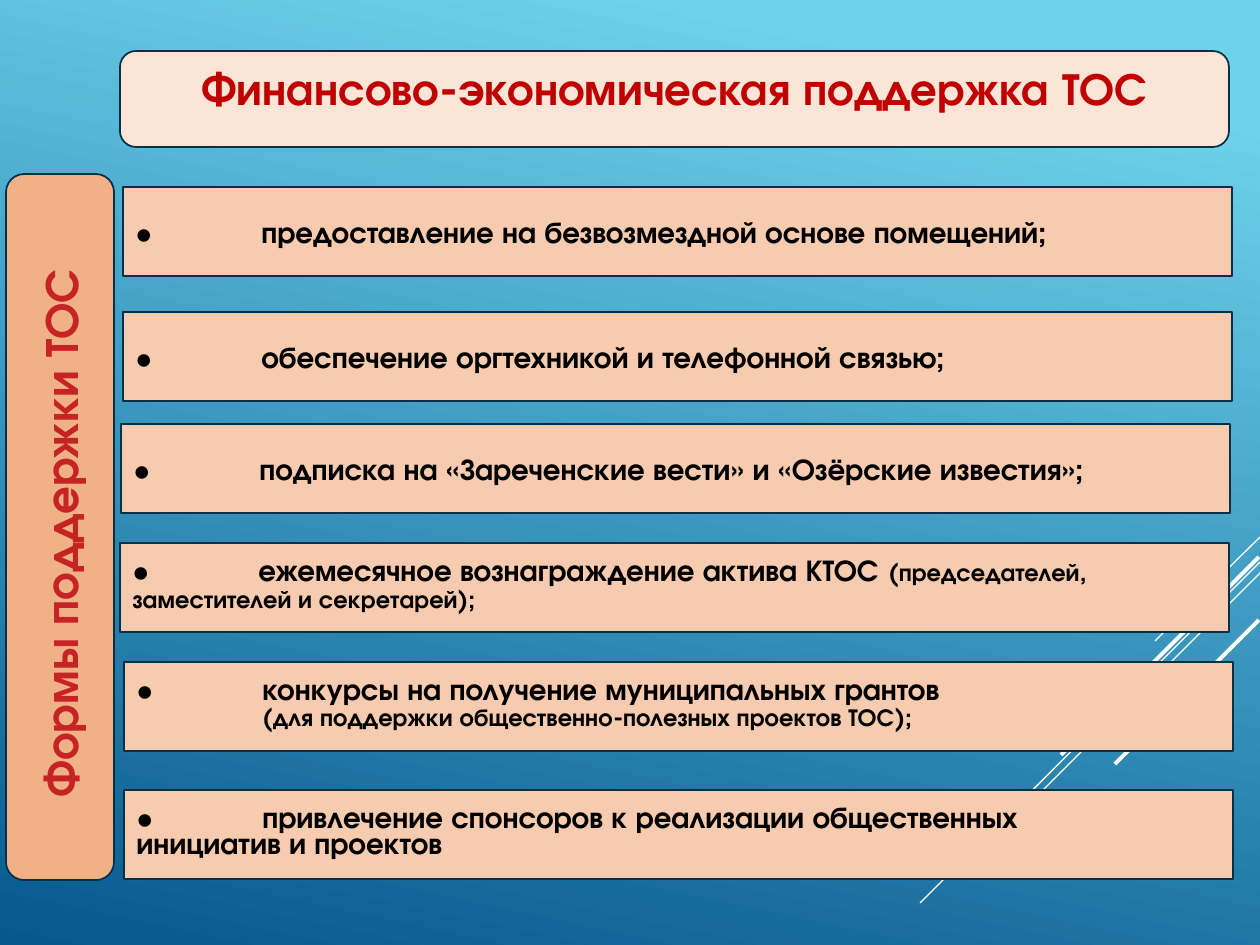
from typing import NamedTuple, Optional

from lxml.etree import SubElement
from pptx import Presentation
from pptx.dml.color import RGBColor
from pptx.enum.shapes import MSO_CONNECTOR, MSO_SHAPE
from pptx.enum.text import MSO_ANCHOR, PP_ALIGN
from pptx.oxml.ns import qn
from pptx.util import Emu, Pt

EMU_PER_PX = 914400 / 126
TAB_STEP = 126
TAB_COUNT = 8
FONT = "TeX Gyre Adventor"
BAR_SIZE = 17.2
DETAIL_SIZE = 14
COLORS = {
    "sky": "6ED2EB",
    "sea": "06588E",
    "ray": "FFFFFF",
    "outline": "043148",
    "title_fill": "FAE5D7",
    "title_text": "C00000",
    "bar_fill": "F6CBAF",
    "bar_text": "000000",
    "side_fill": "F1B187",
    "side_text": "C62324",
}


class Ray(NamedTuple):
    x1: int
    y1: int
    x2: int
    y2: int
    weight: float


class Text(NamedTuple):
    main: str
    detail: str = ""


class Box(NamedTuple):
    x: int
    y: int
    w: int
    h: int
    texts: tuple[Text, ...]
    fill: str = "bar_fill"
    color: str = "bar_text"
    size: float = BAR_SIZE
    spacing: Optional[int] = None
    preset: MSO_SHAPE = MSO_SHAPE.RECTANGLE
    align: PP_ALIGN = PP_ALIGN.LEFT
    rotation: int = 0


def px(n: int) -> Emu:
    return Emu(round(n * EMU_PER_PX))


def rgb(name: str) -> RGBColor:
    return RGBColor.from_string(COLORS[name])


def bar(x: int, y: int, *texts: Text, spacing: Optional[int] = None) -> Box:
    return Box(x, y, 1109, 89, texts, spacing=spacing)


RAYS = [
    Ray(1260, 537, 1155, 641, 0.75),
    Ray(1260, 562, 920, 903, 0.75),
    Ray(1260, 573, 1043, 790, 0.75),
    Ray(1259, 557, 1061, 755, 2.25),
    Ray(1259, 620, 1115, 764, 2.25),
]

BOXES = [
    Box(120, 51, 1109, 96, (Text("Финансово‑экономическая поддержка ТОС"),),
        "title_fill", "title_text", 26, 18, MSO_SHAPE.ROUNDED_RECTANGLE, PP_ALIGN.CENTER),
    bar(123, 187, Text("•\tпредоставление на безвозмездной основе помещений;")),
    bar(123, 312, Text("•\tобеспечение оргтехникой и телефонной связью;")),
    bar(121, 424, Text("•\tподписка на «Зареченские вести» и «Озёрские известия»;")),
    bar(120, 543, Text("•\tежемесячное вознаграждение актива КТОС \t",
                       "(председателей, заместителей и секретарей);"), spacing=15),
    bar(124, 662, Text("•\tконкурсы на получение муниципальных грантов"),
        Text("\t", "(для поддержки общественно-полезных проектов ТОС);"), spacing=15),
    bar(124, 790, Text("•\tпривлечение спонсоров к реализации общественных \tинициатив и проектов"),
        spacing=15),
    Box(-293, 473, 706, 108, (Text("Формы поддержки ТОС "),),
        "side_fill", "side_text", 27, None, MSO_SHAPE.ROUNDED_RECTANGLE, PP_ALIGN.CENTER, 270),
]


def draw_background(s) -> None:
    fill = s.background.fill
    fill.gradient()
    fill.gradient_angle = 258
    for stop, color, position in zip(fill.gradient_stops, ("sky", "sea"), (0.1, 1)):
        stop.color.rgb = rgb(color)
        stop.position = position


def draw_ray(s, ray: Ray) -> None:
    c = s.shapes.add_connector(
        MSO_CONNECTOR.STRAIGHT, px(ray.x1), px(ray.y1), px(ray.x2), px(ray.y2))
    c.line.color.rgb = rgb("ray")
    c.line.width = Pt(ray.weight)
    SubElement(c._element.spPr, qn("a:effectLst"))


def add_tab_stops(p) -> None:
    tabs = SubElement(p._p.get_or_add_pPr(), qn("a:tabLst"))
    for n in range(1, TAB_COUNT + 1):
        SubElement(tabs, qn("a:tab"), pos=str(px(n * TAB_STEP)), algn="l")


def draw_box(s, box: Box) -> None:
    sp = s.shapes.add_shape(box.preset, px(box.x), px(box.y), px(box.w), px(box.h))
    sp.shadow.inherit = False
    sp.rotation = box.rotation
    sp.fill.solid()
    sp.fill.fore_color.rgb = rgb(box.fill)
    sp.line.color.rgb = rgb("outline")
    sp.line.width = Pt(1)
    tf = sp.text_frame
    tf.word_wrap = True
    tf.vertical_anchor = MSO_ANCHOR.MIDDLE
    for i, text in enumerate(box.texts):
        p = tf.add_paragraph() if i else tf.paragraphs[0]
        p.alignment = box.align
        if box.spacing:
            p.line_spacing = Pt(box.spacing)
        if "\t" in text.main:
            add_tab_stops(p)
        p.font.name = FONT
        p.font.size = Pt(box.size)
        p.font.bold = True
        p.font.color.rgb = rgb(box.color)
        p.add_run().text = text.main
        if text.detail:
            r = p.add_run()
            r.text = text.detail
            r.font.size = Pt(DETAIL_SIZE)


def main() -> None:
    prs = Presentation()
    prs.slide_width, prs.slide_height = px(1260), px(945)
    s = prs.slides.add_slide(prs.slide_layouts[6])
    draw_background(s)
    for ray in RAYS:
        draw_ray(s, ray)
    for box in BOXES:
        draw_box(s, box)
    prs.save("out.pptx")


if __name__ == "__main__":
    main()
